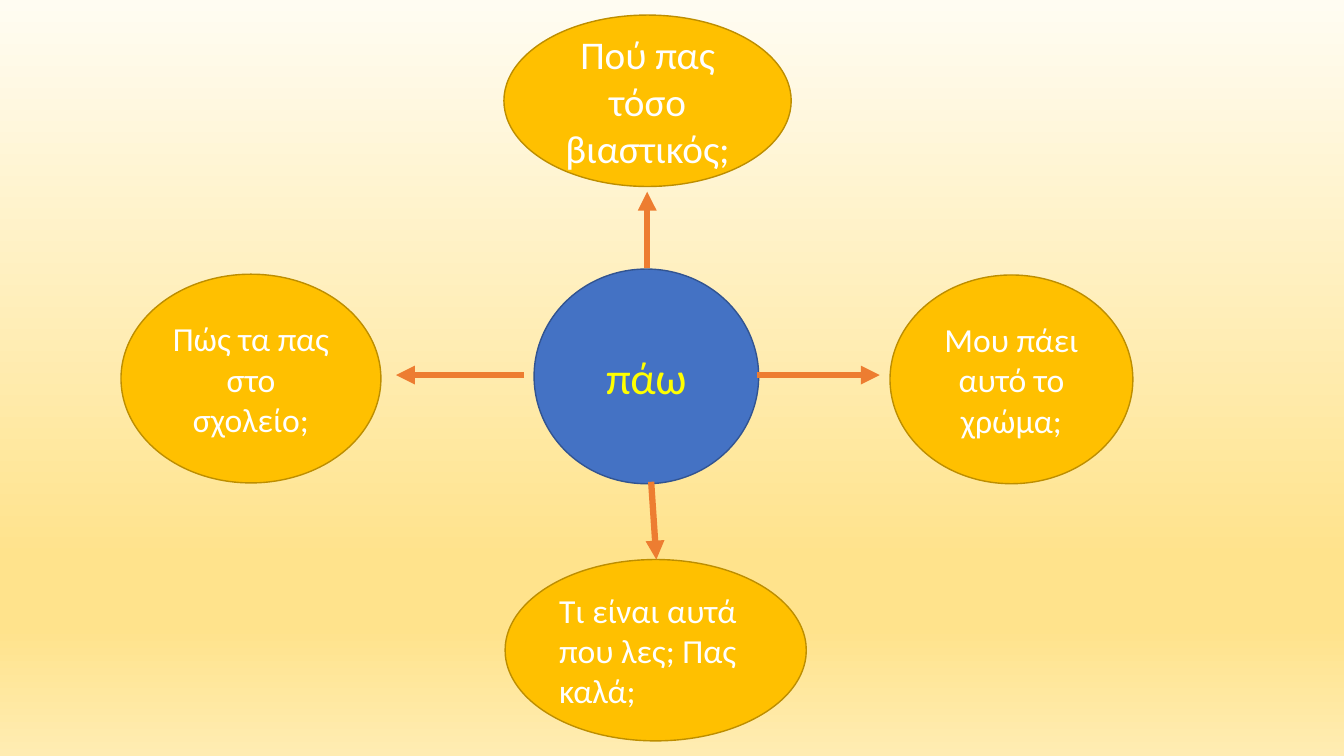
from dataclasses import dataclass

from lxml.etree import SubElement
from pptx import Presentation
from pptx.dml.color import RGBColor
from pptx.enum.shapes import MSO_CONNECTOR as Connector, MSO_SHAPE as Shape
from pptx.enum.text import MSO_ANCHOR as Anchor, PP_ALIGN as Align
from pptx.oxml.ns import qn
from pptx.util import Cm, Pt


@dataclass(frozen=True)
class Theme:
    font: str = "Calibri"
    hub_fill: str = "4472C4"
    hub_line: str = "325491"
    hub_text: str = "FFFF00"
    bubble_fill: str = "FFC000"
    bubble_line: str = "BD8E00"
    bubble_text: str = "FFFFFF"
    arrow: str = "ED7D31"
    backdrop: tuple = ((0, "FFFCF2"), (74, "FFE38C"), (83, "FFE38C"), (100, "FFECB2"))
    hub_size: int = 32
    large_size: int = 28
    body_size: int = 24
    outline: float = 1
    arrow_width: float = 4.5


THEME = Theme()
HUB_COLORS = (THEME.hub_fill, THEME.hub_line, THEME.hub_text)
BUBBLE_COLORS = (THEME.bubble_fill, THEME.bubble_line, THEME.bubble_text)

# Lengths in centimetres; parts are placed relative to the diagram box
DIAGRAM_BOX = (3.05, 0.38)
HUB = ("πάω", (10.41, 6.4, 5.66, 5.41), THEME.hub_size, Align.CENTER)
BUBBLES = (
    ("Πώς τα πας στο σχολείο;", (0, 6.53, 6.55, 5.26), THEME.body_size, Align.CENTER),
    ("Τι είναι αυτά που λες; Πας καλά;", (9.68, 13.72, 7.59, 4.57), THEME.body_size, Align.LEFT),
    ("Πού πας τόσο βιαστικός;", (9.65, 0, 7.24, 4.32), THEME.large_size, Align.CENTER),
    ("Μου πάει αυτό το χρώμα;", (19.38, 6.55, 6.12, 5.26), THEME.body_size, Align.CENTER),
)
ARROWS = (
    (10.16, 9.07, 6.93, 9.07),
    (13.26, 6.38, 13.26, 4.45),
    (16.03, 9.07, 19.12, 9.07),
    (13.36, 11.76, 13.49, 13.72),
)


def rgb(value):
    return RGBColor.from_string(value)


def paint_background(slide):
    fill = slide.background.fill
    fill.gradient()
    fill.gradient_angle = 270
    stops = next(slide.element.iter(qn("a:gsLst")))
    stops.clear()
    for percent, color in THEME.backdrop:
        stop = SubElement(stops, qn("a:gs"), pos=str(percent * 1000))
        SubElement(stop, qn("a:srgbClr"), val=color)


def add_bubble(slide, origin, bubble, colors):
    text, (left, top, width, height), size, alignment = bubble
    fill, line, text_color = colors
    shape = slide.shapes.add_shape(
        Shape.OVAL, Cm(origin[0] + left), Cm(origin[1] + top), Cm(width), Cm(height))
    shape.shadow.inherit = False
    shape.fill.solid()
    shape.fill.fore_color.rgb = rgb(fill)
    shape.line.color.rgb = rgb(line)
    shape.line.width = Pt(THEME.outline)
    frame = shape.text_frame
    frame.word_wrap = True
    frame.vertical_anchor = Anchor.MIDDLE
    paragraph = frame.paragraphs[0]
    paragraph.alignment = alignment
    run = paragraph.add_run()
    run.text = text
    run.font.name = THEME.font
    run.font.size = Pt(size)
    run.font.color.rgb = rgb(text_color)


def add_arrow(slide, origin, ends):
    x, y = origin
    x1, y1, x2, y2 = ends
    arrow = slide.shapes.add_connector(
        Connector.STRAIGHT, Cm(x + x1), Cm(y + y1), Cm(x + x2), Cm(y + y2))
    arrow.line.color.rgb = rgb(THEME.arrow)
    arrow.line.width = Pt(THEME.arrow_width)
    SubElement(arrow.line._get_or_add_ln(), qn("a:tailEnd"), type="triangle")
    SubElement(arrow.element.spPr, qn("a:effectLst"))


def add_word_map(slide, origin):
    # Central word
    add_bubble(slide, origin, HUB, HUB_COLORS)
    # Example phrases around it
    for bubble in BUBBLES:
        add_bubble(slide, origin, bubble, BUBBLE_COLORS)
    # Arrows pointing outwards
    for ends in ARROWS:
        add_arrow(slide, origin, ends)


def main():
    presentation = Presentation()
    presentation.slide_width = Cm(33.87)
    presentation.slide_height = Cm(19.05)
    slide = presentation.slides.add_slide(presentation.slide_layouts.get_by_name("Blank"))
    paint_background(slide)
    add_word_map(slide, DIAGRAM_BOX)
    presentation.save("out.pptx")


if __name__ == "__main__":
    main()
